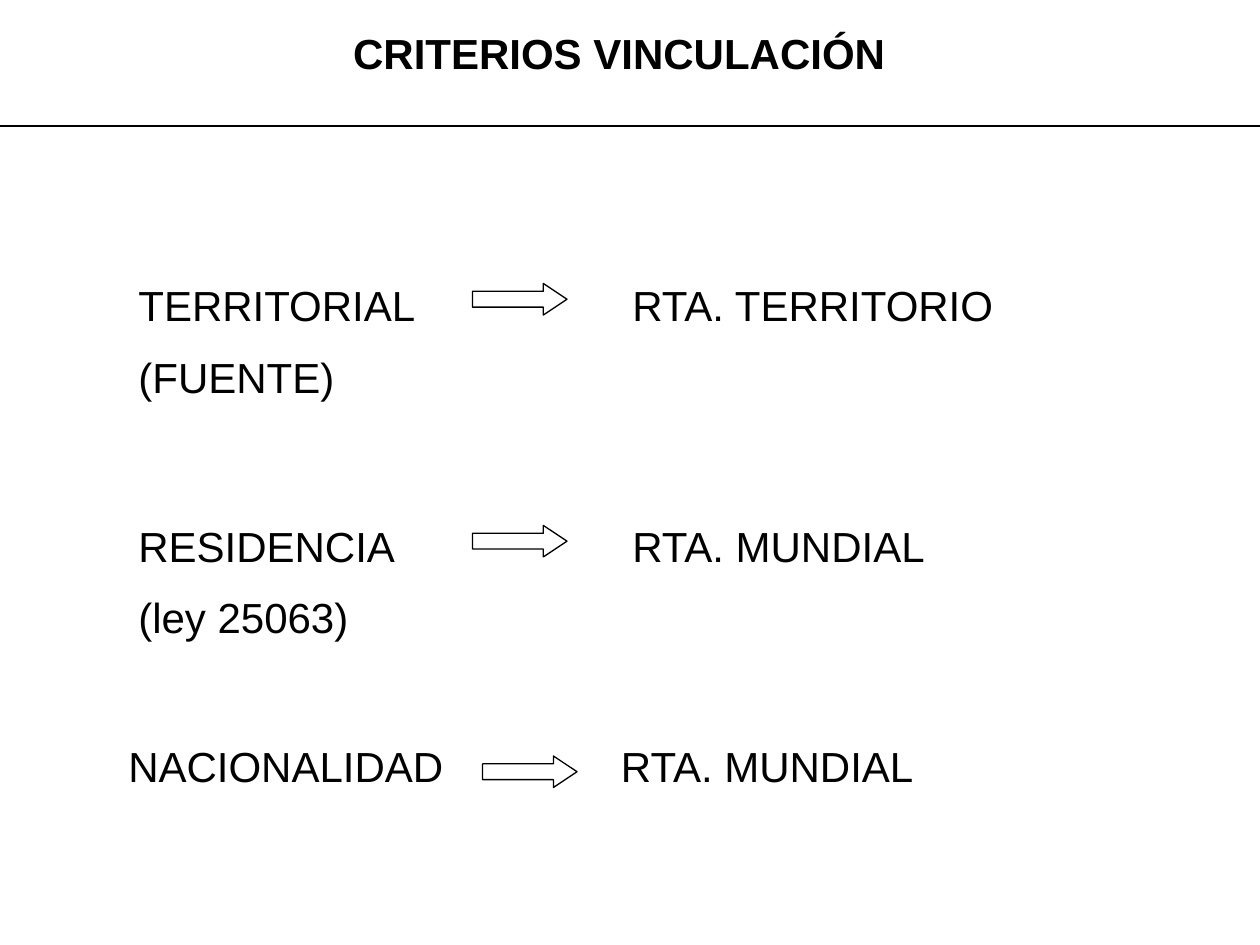
from lxml import etree
from pptx import Presentation
from pptx.dml.color import RGBColor
from pptx.enum.shapes import MSO_CONNECTOR, MSO_SHAPE
from pptx.enum.text import MSO_AUTO_SIZE, PP_ALIGN
from pptx.oxml.ns import qn
from pptx.util import Inches, Pt

LEFT, CENTER = PP_ALIGN.LEFT, PP_ALIGN.CENTER
GROW = MSO_AUTO_SIZE.SHAPE_TO_FIT_TEXT
ARROW, STRAIGHT = MSO_SHAPE.RIGHT_ARROW, MSO_CONNECTOR.STRAIGHT

WIDTH, HEIGHT = 10, 7.5
BLACK = "000000"
FONT, SIZE = "Arial", 24
LINE_HEIGHT, TWO_LINES = 0.5, 1.11

TITLE = "CRITERIOS VINCULACIÓN "
CRITERIA = [
    {"lines": ["TERRITORIAL", "(FUENTE)"], "result": "RTA. TERRITORIO",
     "top": 2.17, "arrow_top": 2.25, "columns": (1, 3.75, 4.92), "width": 2.42},
    {"lines": ["RESIDENCIA", "(ley 25063)"], "result": "RTA. MUNDIAL",
     "top": 4.08, "arrow_top": 4.17, "columns": (1, 3.75, 4.92), "width": 2.33},
    {"lines": ["NACIONALIDAD"], "result": "RTA. MUNDIAL",
     "top": 5.83, "arrow_top": 6, "columns": (0.92, 3.83, 4.83), "width": 3.17},
]


def color(value):
    return RGBColor.from_string(value)


def box(x, y, w, h):
    return [Inches(v) for v in (x, y, w, h)]


def outline(s):
    s.line.color.rgb = color(BLACK)
    s.line.width = Pt(0.75)


def add_text(lines, x, y, w, align=LEFT, bold=False):
    h = TWO_LINES if len(lines) > 1 else LINE_HEIGHT
    tf = slide.shapes.add_textbox(*box(x, y, w, h)).text_frame
    tf.text = "\n".join(lines)
    tf.word_wrap = True
    tf.auto_size = GROW
    for i, p in enumerate(tf.paragraphs):
        p.alignment = align
        if i:
            p.space_before = Pt(SIZE / 2)
        font = p.runs[0].font
        font.name, font.size, font.bold = FONT, Pt(SIZE), bold
        font.color.rgb = color(BLACK)


def add_arrow(x, y):
    s = slide.shapes.add_shape(ARROW, *box(x, y, 0.75, 0.25))
    s.adjustments[0], s.adjustments[1] = 0.5, 0.75
    s.shadow.inherit = False
    s.fill.background()
    outline(s)


prs = Presentation()
prs.slide_width, prs.slide_height = Inches(WIDTH), Inches(HEIGHT)
slide = prs.slides.add_slide(prs.slide_layouts[6])

add_text([TITLE], 2.67, 0.17, 4.58, CENTER, True)
rule = slide.shapes.add_connector(STRAIGHT, *box(0, 1, WIDTH, 1))
outline(rule)
etree.SubElement(rule.element.spPr, qn("a:effectLst"))

for row in CRITERIA:
    text_x, arrow_x, result_x = row["columns"]
    add_text(row["lines"], text_x, row["top"], row["width"])
    add_arrow(arrow_x, row["arrow_top"])
    add_text([row["result"]], result_x, row["top"], 3.5)

prs.save("out.pptx")
